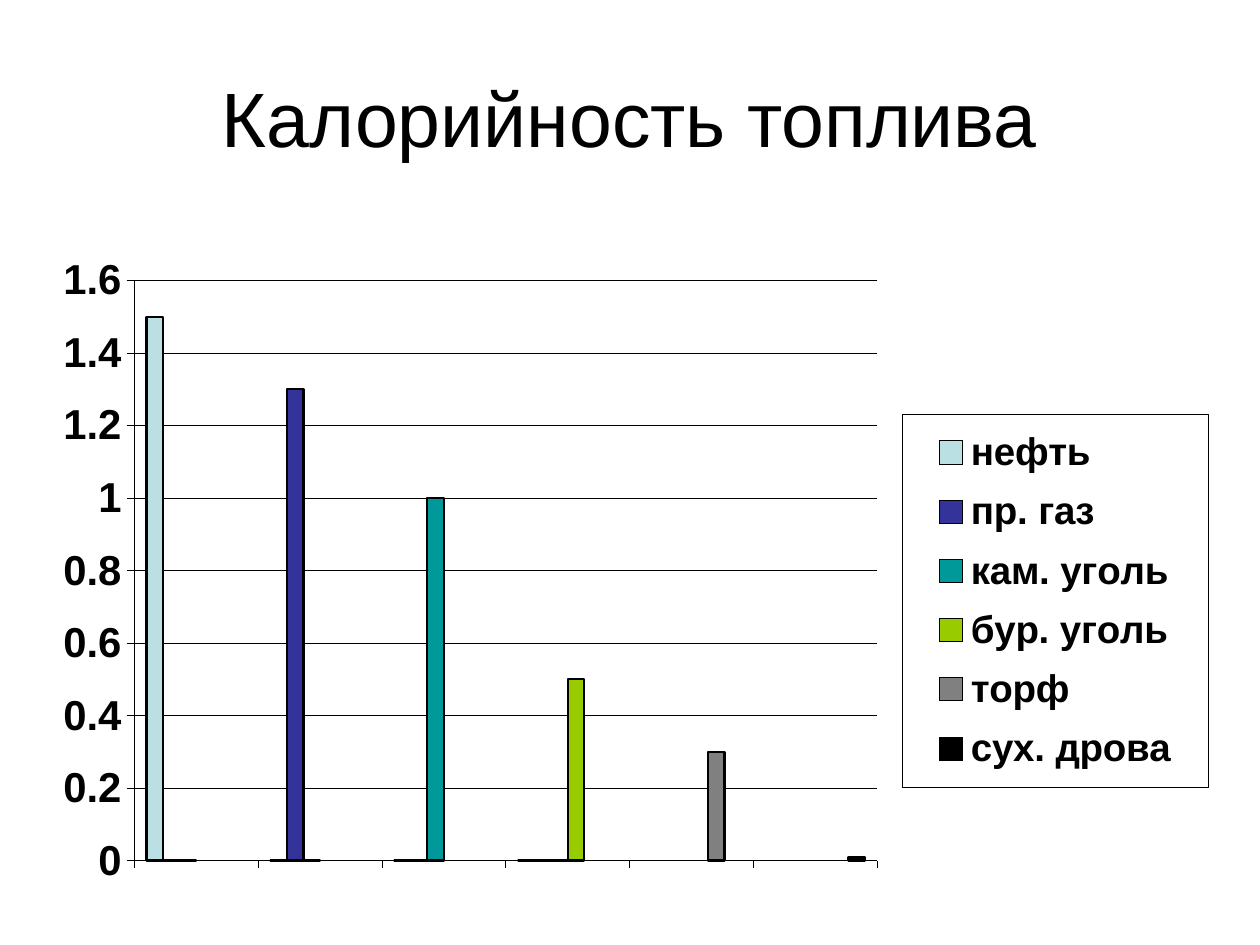
from pptx import Presentation
from pptx import util as u
from pptx.chart.data import CategoryChartData
from pptx.dml.color import RGBColor
from pptx.enum import chart as c, text
from pptx.oxml import parse_xml
from pptx.oxml.ns import nsdecls

BLACK = RGBColor(0x00, 0x00, 0x00)
FUELS = [
    ("нефть", [1.5, 0, 0, 0, None, None], RGBColor(0xBB, 0xE0, 0xE3)),
    ("пр. газ", [0, 1.3, 0, 0, None, None], RGBColor(0x33, 0x33, 0x99)),
    ("кам. уголь", [0, 0, 1, 0, None, None], RGBColor(0x00, 0x99, 0x99)),
    ("бур. уголь", [None, None, None, 0.5, None, None], RGBColor(0x99, 0xCC, 0x00)),
    ("торф", [None, None, None, None, 0.3, None], RGBColor(0x80, 0x80, 0x80)),
    ("сух. дрова", [None, None, None, None, None, 0.01], BLACK),
]


def apply(target, **values):
    """Set each given attribute on the target."""
    for name, value in values.items():
        setattr(target, name, value)


def style_font(font, size, bold):
    """Give a font the slide's typeface and colour."""
    apply(font, name="Arial", size=u.Pt(size), bold=bold)
    font.color.rgb = BLACK


def style_line(line, width):
    """Draw a solid black line of the given width in points."""
    line.color.rgb = BLACK
    line.width = u.Pt(width)


def layout_element(x, y, width, height, inner=False):
    """Return a manual chart layout from fractions of the chart area."""
    target = '<c:layoutTarget val="inner"/>' if inner else ""
    values = dict(xMode="edge", yMode="edge", x=x, y=y, w=width, h=height)
    parts = "".join(f'<c:{tag} val="{value}"/>' for tag, value in values.items())
    return parse_xml(f'<c:layout {nsdecls("c")}><c:manualLayout>{target}{parts}'
                     "</c:manualLayout></c:layout>")


def add_title(page, wording):
    """Add the centred slide title."""
    box = page.shapes.add_textbox(u.Cm(1.27), u.Cm(0.76), u.Cm(22.86), u.Cm(3.18))
    frame = box.text_frame
    apply(frame, word_wrap=True, vertical_anchor=text.MSO_ANCHOR.MIDDLE)
    para = frame.paragraphs[0]
    para.alignment = text.PP_ALIGN.CENTER
    span = para.add_run()
    span.text = wording
    style_font(span.font, 44, False)


def add_fuel_chart(page):
    """Add the column chart with one series for each fuel."""
    data = CategoryChartData()
    data.categories = [" "] * len(FUELS)
    for name, values, _ in FUELS:
        data.add_series(name, values)
    chart = page.shapes.add_chart(
        c.XL_CHART_TYPE.COLUMN_CLUSTERED,
        u.Cm(0.64), u.Cm(4.67), u.Cm(23.72), u.Cm(14.73), data).chart
    apply(chart, has_title=False, has_legend=True)
    style_font(chart.font, 23.9, True)
    plot = chart.plots[0]
    apply(plot, gap_width=150, overlap=0, vary_by_categories=False)
    for series, (_, _, color) in zip(plot.series, FUELS):
        series.format.fill.solid()
        series.format.fill.fore_color.rgb = color
        style_line(series.format.line, 1.33)
    style_axes(chart)
    style_legend(chart)
    area = chart._chartSpace.xpath(".//c:plotArea")[0]
    for old in area.xpath("./c:layout"):
        area.remove(old)
    area.insert(0, layout_element(0.087, 0.067, 0.632, 0.794, inner=True))


def style_axes(chart):
    """Format both axes and the horizontal grid."""
    for axis in (chart.category_axis, chart.value_axis):
        apply(axis, major_tick_mark=c.XL_TICK_MARK.OUTSIDE,
              minor_tick_mark=c.XL_TICK_MARK.NONE)
        style_line(axis.format.line, 0.33)
        style_font(axis.tick_labels.font, 23.9, True)
    chart.category_axis.tick_label_position = c.XL_TICK_LABEL_POSITION.LOW
    scale = chart.value_axis
    apply(scale, minimum_scale=0, maximum_scale=1.6, major_unit=0.2,
          has_major_gridlines=True)
    apply(scale.tick_labels, number_format="General", number_format_is_linked=False)
    style_line(scale.major_gridlines.format.line, 0.33)


def style_legend(chart):
    """Place the outlined legend to the right of the columns."""
    apply(chart.legend, position=c.XL_LEGEND_POSITION.RIGHT, include_in_layout=False)
    style_font(chart.legend.font, 22, True)
    legend = chart._chartSpace.xpath(".//c:legend")[0]
    for old in legend.xpath("./c:layout"):
        legend.remove(old)
    legend.xpath("./c:legendPos")[0].addnext(layout_element(0.74, 0.25, 0.26, 0.51))
    border = parse_xml(
        f'<c:spPr {nsdecls("c", "a")}><a:noFill/><a:ln w="{u.Pt(0.33)}"><a:solidFill>'
        f'<a:srgbClr val="{BLACK}"/></a:solidFill></a:ln></c:spPr>')
    legend.xpath("./c:txPr")[0].addprevious(border)


def main():
    """Build and save the slide."""
    deck = Presentation()
    apply(deck, slide_width=u.Cm(25.4), slide_height=u.Cm(19.05))
    page = deck.slides.add_slide(deck.slide_layouts[6])
    add_title(page, "Калорийность топлива")
    add_fuel_chart(page)
    deck.save("out.pptx")


if __name__ == "__main__":
    main()
